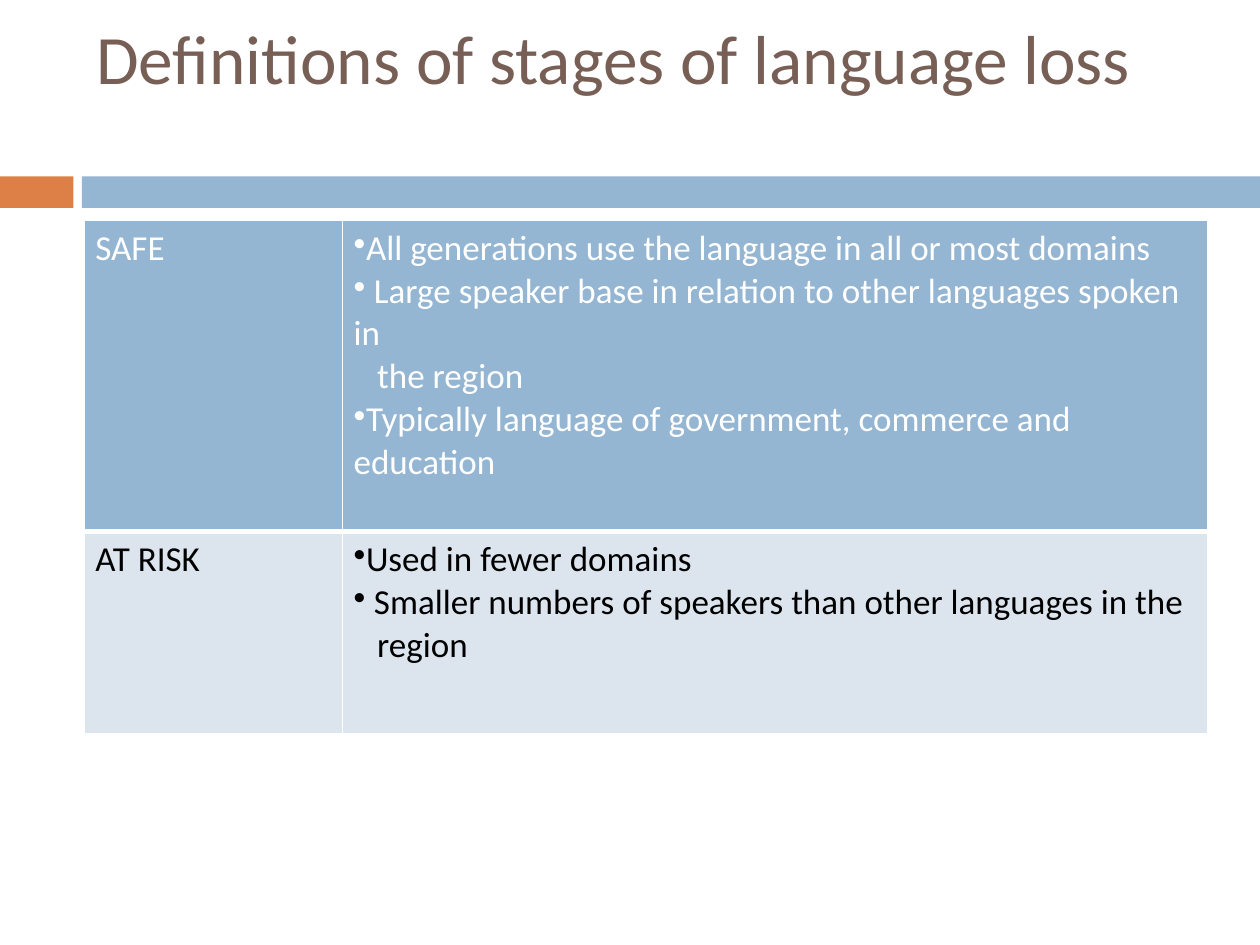
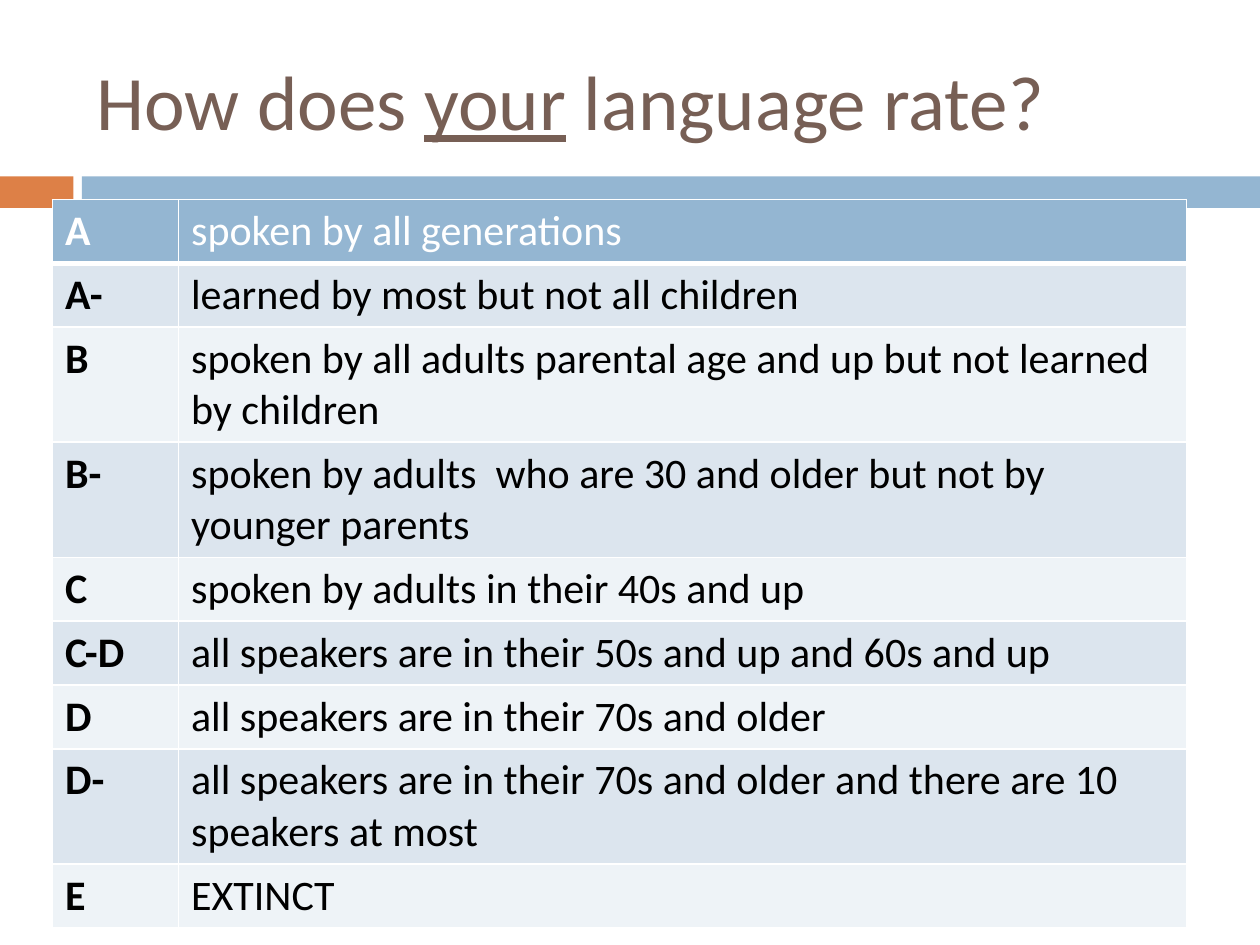
"""Build two slides on language loss: stage definitions and a rating scale."""
from lxml.etree import SubElement
from pptx import Presentation
from pptx.dml.color import RGBColor
from pptx.enum.shapes import MSO_SHAPE
from pptx.enum.text import MSO_ANCHOR
from pptx.oxml.ns import qn
from pptx.util import Inches, Pt

ORANGE, BLUE, BROWN = "DD8047", "94B6D2", "775F55"
WHITE, BLACK = "FFFFFF", "000000"
BANDS = ["DCE5EE", "EEF3F7"]
COLUMNS, ROWS = 120, 90
ONE_LINE, TWO_LINES = 6.08, 10.97

STAGES = [
    ("SAFE", ["•All generations use the language in all or most domains",
              "• Large speaker base in relation to other languages spoken in",
              "the region",
              "•Typically language of government, commerce and education"]),
    ("AT RISK", ["•Used in fewer domains",
                 "• Smaller numbers of speakers than other languages in the",
                 "region"]),
]
GRADES = [
    ("A", "spoken by all generations", ONE_LINE),
    ("A-", "learned by most but not all children", ONE_LINE),
    ("B", "spoken by all adults parental age and up but not learned by children", TWO_LINES),
    ("B-", "spoken by adults  who are 30 and older but not by younger parents", TWO_LINES),
    ("C", "spoken by adults in their 40s and up", ONE_LINE),
    ("C-D", "all speakers are in their 50s and up and 60s and up", ONE_LINE),
    ("D", "all speakers are in their 70s and older", ONE_LINE),
    ("D-", "all speakers are in their 70s and older and there are 10 speakers at most", TWO_LINES),
    ("E", "EXTINCT", ONE_LINE),
]


def color(value):
    return RGBColor.from_string(value)


class Deck:
    def __init__(self, font="Calibri"):
        self.prs = Presentation()
        self.prs.slide_width, self.prs.slide_height = Inches(10), Inches(7.5)
        self.font = font
        self.s = None

    def x(self, columns):
        return round(self.prs.slide_width * columns / COLUMNS)

    def y(self, rows):
        return round(self.prs.slide_height * rows / ROWS)

    def box(self, left, top, width, height):
        return self.x(left), self.y(top), self.x(width), self.y(height)

    def slide(self):
        self.s = self.prs.slides.add_slide(self.prs.slide_layouts[6])
        self.band(0, 7, ORANGE)
        self.band(7.8, 112.2, BLUE)

    def band(self, left, width, fill):
        sp = self.s.shapes.add_shape(MSO_SHAPE.RECTANGLE, *self.box(left, 16.8, width, 3))
        sp.shadow.inherit = False
        sp.fill.solid()
        sp.fill.fore_color.rgb = color(fill)
        sp.line.fill.background()

    def style(self, p, size, ink, bold=False):
        for r in p.runs:
            r.font.name, r.font.size, r.font.bold = self.font, Pt(size), bold
            r.font.color.rgb = color(ink)

    def title(self, parts, size, top=3, height=13, underlined=None):
        tf = self.s.shapes.add_textbox(*self.box(8, top, 107, height)).text_frame
        tf.word_wrap = True
        tf.vertical_anchor = MSO_ANCHOR.MIDDLE
        p = tf.paragraphs[0]
        for part in parts:
            r = p.add_run()
            r.text = part
            r.font.underline = part == underlined
        self.style(p, size, BROWN)

    def bullets(self, p, text):
        pPr = p._p.get_or_add_pPr()
        bulleted = text.startswith("•")
        p.text = text.removeprefix("•")
        pPr.set("marL", str(0 if bulleted else self.x(2.25)))
        pPr.set("indent", "0")
        if bulleted:
            SubElement(pPr, qn("a:buChar")).set("char", "•")

    def borders(self, cell, row):
        tcPr = cell._tc.get_or_add_tcPr()
        for side in "LRTB":
            thick = (row, side) in [(0, "B"), (1, "T")]
            ln = SubElement(tcPr, qn(f"a:ln{side}"), w=str(Pt(3 if thick else 1)))
            fill = SubElement(ln, qn("a:solidFill"))
            SubElement(fill, qn("a:srgbClr"), val=WHITE)

    def table(self, left, top, widths, heights, content, size, margin, bold_labels=False):
        area = self.box(left, top, sum(widths), sum(heights))
        table = self.s.shapes.add_table(len(heights), len(widths), *area).table
        table.first_row = table.horz_banding = False
        for column, width in zip(table.columns, widths):
            column.width = self.x(width)
        for i, (height, row) in enumerate(zip(heights, content)):
            table.rows[i].height = self.y(height)
            for j, value in enumerate(row):
                cell = table.cell(i, j)
                self.borders(cell, i)
                cell.fill.solid()
                cell.fill.fore_color.rgb = color(BANDS[(i - 1) % 2] if i else BLUE)
                cell.margin_left = cell.margin_right = Inches(margin)
                self.cell_text(cell.text_frame, value, size,
                               BLACK if i else WHITE, bold_labels and j == 0)

    def cell_text(self, tf, value, size, ink, bold):
        if isinstance(value, str):
            tf.text = value
        else:
            for n, line in enumerate(value):
                self.bullets(tf.add_paragraph() if n else tf.paragraphs[0], line)
        for p in tf.paragraphs:
            self.style(p, size, ink, bold)


def main():
    deck = Deck()
    deck.slide()
    deck.title(["Definitions of stages of language loss"], 39.6, top=0, height=10.9)
    deck.table(8, 21, [24.6, 82.4], [29.64, 19.2], STAGES, 20, 0.09)

    deck.slide()
    deck.title(["How does ", "your", " language rate?"], 44, underlined="your")
    deck.table(5, 19, [12, 96], [height for *_, height in GRADES],
               [(grade, meaning) for grade, meaning, _ in GRADES], 24, 0.1, bold_labels=True)
    deck.prs.save("out.pptx")


if __name__ == "__main__":
    main()
